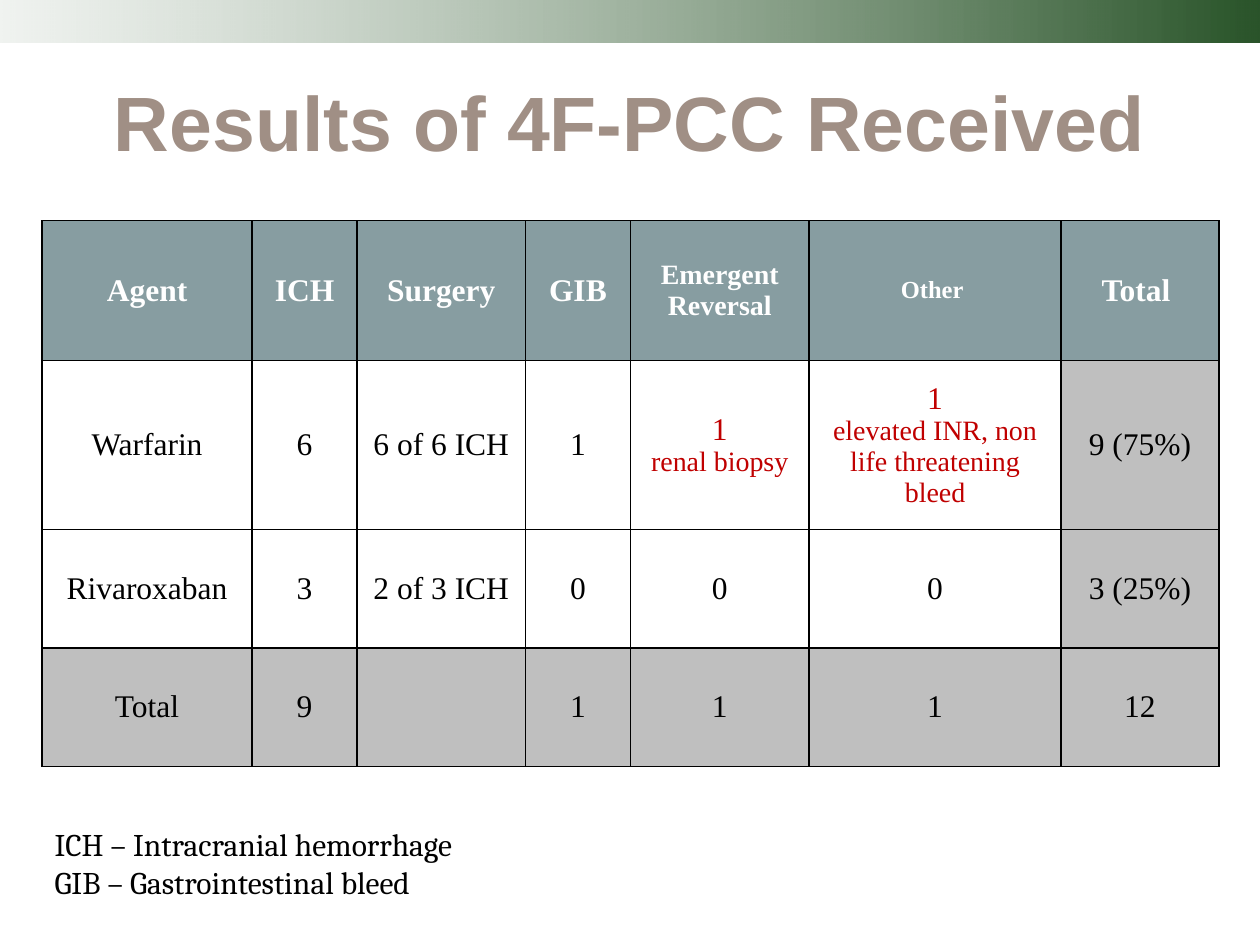
import pptx
import pptx.util
import pptx.dml.color
import pptx.enum.shapes
import pptx.enum.text
import pptx.oxml.ns
import lxml.etree
from pptx.util import Cm

COLORS = {
    "title": "A08F85", "band_left": "668566", "band_right": "003300",
    "header": "879DA1", "total": "BFBFBF", "plain": "FFFFFF",
    "white": "FFFFFF", "black": "000000", "red": "C00000",
}

# Content
TITLE = "Results of 4F-PCC Received"
HEADER = ["Agent", "ICH", "Surgery", "GIB", "Emergent Reversal", "Other ", "Total "]
HEADER_SIZES = [18, 18, 18, 18, 16, 14, 18]
BODY = [
    ["Warfarin", "6", "6 of 6 ICH ", "1", "1\nrenal biopsy",
     "1\nelevated INR, non life threatening bleed", "9 (75%)"],
    ["Rivaroxaban", "3", "2 of 3 ICH ", "0", "0", "0", "3 (25%)"],
    ["Total", "9", "", "1", "1", "1", "12"],
]
KEY = "ICH – Intracranial hemorrhage\nGIB – Gastrointestinal bleed"

# Measures in centimetres
PAGE_WIDTH, PAGE_HEIGHT = 25.4, 19.05
MARGIN = BAND_HEIGHT = 0.85
TABLE_TOP = 4.45
COLUMN_WIDTHS = [4.23, 2.12, 3.39, 2.12, 3.6, 5.08, 3.18]
ROW_HEIGHTS = [2.82, 3.4, 2.39, 2.39]


def rgb(name):
    return pptx.dml.color.RGBColor.from_string(COLORS[name])


def write(frame, text, sizes=(18,), font="Times New Roman", color="black",
          bold=False, align="LEFT"):
    """Write one paragraph per line; the last size serves any further lines."""
    for index, line in enumerate(text.split("\n")):
        para = frame.paragraphs[0] if index == 0 else frame.add_paragraph()
        para.alignment = getattr(pptx.enum.text.PP_ALIGN, align)
        if not line:
            para.font.size = pptx.util.Pt(sizes[0])
            continue
        span = para.add_run()
        span.text = line
        span.font.name = font
        span.font.size = pptx.util.Pt(sizes[min(index, len(sizes) - 1)])
        span.font.bold = bold
        span.font.color.rgb = rgb(color)


def add_child(parent, tag, **attributes):
    return lxml.etree.SubElement(parent, pptx.oxml.ns.qn(tag), **attributes)


def add_borders(cell):
    properties = cell._tc.get_or_add_tcPr()
    for side in ("a:lnL", "a:lnR", "a:lnT", "a:lnB"):
        line = add_child(properties, side, w="12700")
        add_child(add_child(line, "a:solidFill"), "a:srgbClr", val=COLORS["black"])


deck = pptx.Presentation()
deck.slide_width, deck.slide_height = Cm(PAGE_WIDTH), Cm(PAGE_HEIGHT)
page = deck.slides.add_slide(deck.slide_layouts[6])

# Title
box = page.shapes.add_textbox(0, Cm(BAND_HEIGHT), Cm(PAGE_WIDTH), Cm(3.18))
box.text_frame.word_wrap = True
box.text_frame.vertical_anchor = pptx.enum.text.MSO_ANCHOR.MIDDLE
write(box.text_frame, TITLE, sizes=(44,), font="Arial", color="title",
      bold=True, align="CENTER")

# Gradient band along the top
band = page.shapes.add_shape(pptx.enum.shapes.MSO_SHAPE.RECTANGLE,
                             0, 0, Cm(PAGE_WIDTH), Cm(BAND_HEIGHT))
band.shadow.inherit = False
band.line.fill.background()
band.fill.gradient()
band.fill.gradient_angle = 0
for stop, name in zip(band.fill.gradient_stops, ("band_left", "band_right")):
    stop.color.rgb = rgb(name)
gradient_colors = band._element.spPr.iter(pptx.oxml.ns.qn("a:srgbClr"))
for color, alpha in zip(list(gradient_colors), ("10000", "84000")):
    add_child(color, "a:alpha", val=alpha)

# Results table
rows = [HEADER] + BODY
last_row, last_column = len(rows) - 1, len(HEADER) - 1
table = page.shapes.add_table(
    len(rows), len(HEADER), Cm(MARGIN), Cm(TABLE_TOP),
    Cm(sum(COLUMN_WIDTHS)), Cm(sum(ROW_HEIGHTS))).table
table.first_row = table.horz_banding = False
for column, width in zip(table.columns, COLUMN_WIDTHS):
    column.width = Cm(width)
for row, height in zip(table.rows, ROW_HEIGHTS):
    row.height = Cm(height)

for r, row in enumerate(rows):
    for c, text in enumerate(row):
        cell = table.cell(r, c)
        cell.vertical_anchor = pptx.enum.text.MSO_ANCHOR.MIDDLE
        add_borders(cell)
        cell.fill.solid()
        if r == 0:
            cell.fill.fore_color.rgb = rgb("header")
            write(cell.text_frame, text, sizes=(HEADER_SIZES[c],),
                  color="white", bold=True, align="CENTER")
        else:
            is_total = r == last_row or c == last_column
            cell.fill.fore_color.rgb = rgb("total" if is_total else "plain")
            write(cell.text_frame, text, sizes=(18, 16),
                  color="red" if "\n" in text else "black", align="CENTER")

# Key to abbreviations
box = page.shapes.add_textbox(Cm(MARGIN), Cm(16.51), Cm(9.42), Cm(1.8))
box.text_frame.word_wrap = False
write(box.text_frame, KEY, font="Cambria")

deck.save("out.pptx")
